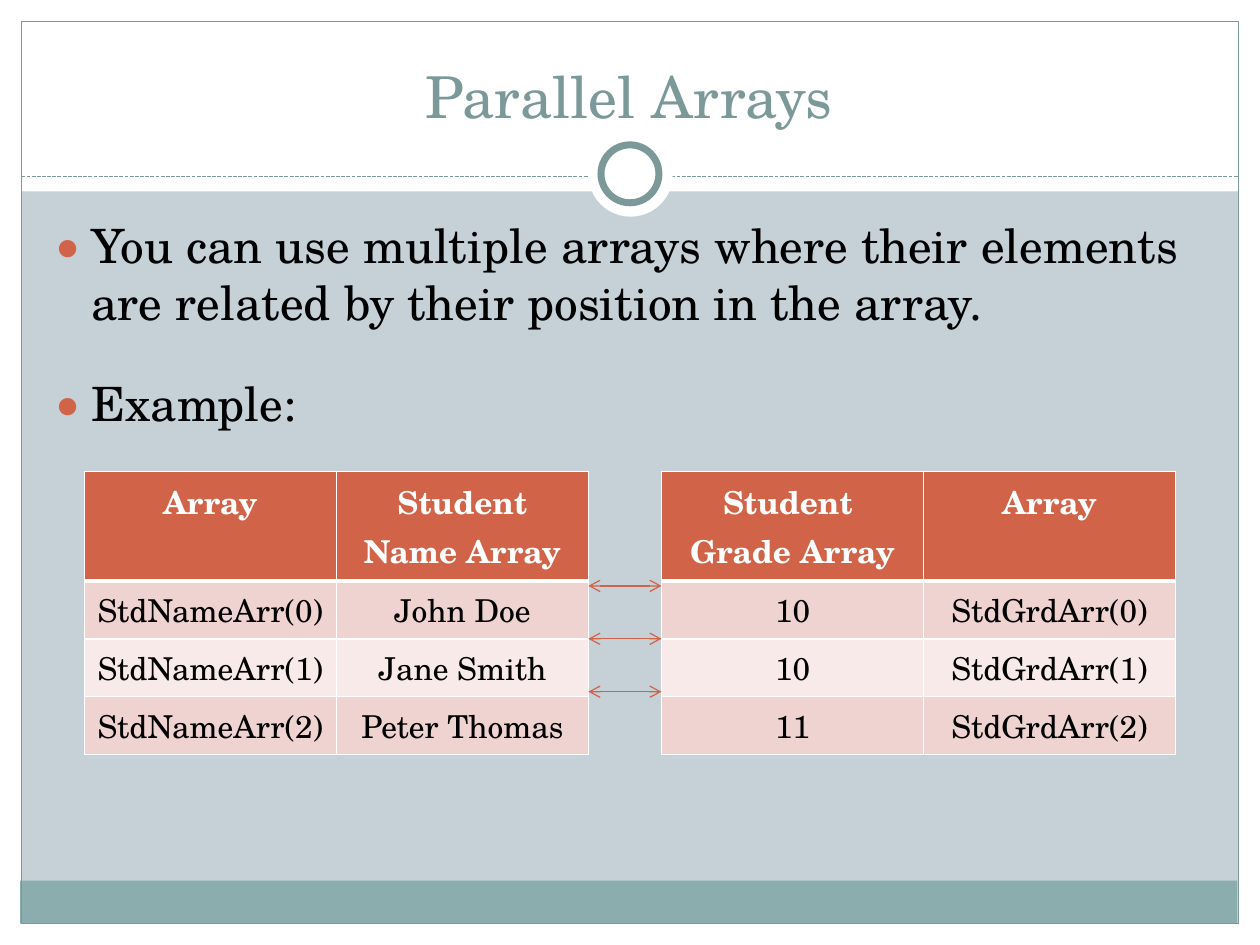
from dataclasses import dataclass
from lxml.etree import SubElement as Sub
from pptx import Presentation as Deck
from pptx.dml.color import RGBColor as Rgb
from pptx.enum.dml import MSO_LINE_DASH_STYLE as Dash
from pptx.enum.shapes import MSO_CONNECTOR as Link, MSO_SHAPE as Kind
from pptx.enum.text import MSO_ANCHOR as Anchor, PP_ALIGN as Align
from pptx.oxml.ns import qn
from pptx.util import Emu, Pt

SCALE = 9144
FONT = "TeX Gyre Schola"
HUES = {
    "back": "C5D1D7", "white": "FFFFFF", "band": "8CADAE", "edge": "7C999A",
    "rust": "D16349", "rose": "EED3D0", "pale": "F7EAE9", "black": "000000",
}
TITLE = {"size": Pt(33), "bold": False, "hue": "edge"}
BODY = {"size": Pt(27), "bold": False, "hue": "black"}
HEAD = {"size": Pt(18), "bold": True, "hue": "white"}
CELL = {"size": Pt(18), "bold": False, "hue": "black"}
PAD = {"margin_top": 5, "margin_bottom": 5, "margin_left": 10, "margin_right": 10}
TOP, TALL, LOW = 374, 87, 46


@dataclass
class Box:
    x: int
    y: int
    w: int
    h: int
    fill: str = ""
    line: str = ""
    width: float = 0.75
    kind: Kind = Kind.RECTANGLE


@dataclass
class Wire:
    x: int
    y: int
    end: int
    hue: str
    dash: bool = False
    heads: bool = False


@dataclass
class Grid:
    x: int
    cols: list[int]
    rows: list[list[str]]


@dataclass
class Point:
    text: str
    gap: float


BOXES = [
    Box(0, 733, 1000, 17, "white"),
    Box(0, 0, 1000, 152, "white"),
    Box(0, 0, 17, 750, "white"),
    Box(983, 0, 17, 750, "white"),
    Box(16, 699, 966, 34, "band"),
    Box(17, 17, 966, 716, line="edge"),
]
RINGS = [
    Box(467, 105, 67, 67, "white", kind=Kind.OVAL),
    Box(477, 115, 46, 46, "white", "edge", 4, Kind.OVAL),
]
POINTS = [
    Point("You can use multiple arrays where their elements are related by "
          "their position in the array.", 5.4),
    Point("Example:", 25),
]
NAMES = ["John Doe", "Jane Smith", "Peter Thomas"]
GRADES = ["10", "10", "11"]
GRIDS = [
    Grid(67, [200, 200], [["Array", "Student Name Array"]]
         + [[f"StdNameArr({i})", name] for i, name in enumerate(NAMES)]),
    Grid(525, [208, 200], [["Student \vGrade Array", "Array"]]
         + [[grade, f"StdGrdArr({i})"] for i, grade in enumerate(GRADES)]),
]


def px(num: int) -> Emu:
    return Emu(num * SCALE)


def tint(hue: str) -> Rgb:
    return Rgb.from_string(HUES[hue])


def style(font, look: dict) -> None:
    for key, val in {**look, "name": FONT}.items():
        if key == "hue":
            font.color.rgb = tint(val)
        else:
            setattr(font, key, val)


def draw_box(slide, box: Box) -> None:
    shape = slide.shapes.add_shape(box.kind, *map(px, (box.x, box.y, box.w, box.h)))
    shape.shadow.inherit = False
    if box.fill:
        shape.fill.solid()
        shape.fill.fore_color.rgb = tint(box.fill)
    else:
        shape.fill.background()
    if box.line:
        shape.line.color.rgb = tint(box.line)
        shape.line.width = Pt(box.width)
    else:
        shape.line.fill.background()


def draw_wire(slide, wire: Wire) -> None:
    ends = map(px, (wire.x, wire.y, wire.end, wire.y))
    shape = slide.shapes.add_connector(Link.STRAIGHT, *ends)
    shape.line.color.rgb = tint(wire.hue)
    shape.line.width = Pt(0.75)
    if wire.dash:
        shape.line.dash_style = Dash.SQUARE_DOT
    if wire.heads:
        line = shape._element.spPr.find(qn("a:ln"))
        for tag in ("a:headEnd", "a:tailEnd"):
            Sub(line, qn(tag), type="arrow")
    Sub(shape._element.spPr, qn("a:effectLst"))


def add_text(slide, x: int, y: int, w: int, h: int):
    frame = slide.shapes.add_textbox(*map(px, (x, y, w, h))).text_frame
    frame.word_wrap = True
    return frame


def draw_title(slide, text: str) -> None:
    frame = add_text(slide, 33, 25, 933, 83)
    frame.vertical_anchor = Anchor.BOTTOM
    para = frame.paragraphs[0]
    para.alignment = Align.CENTER
    run = para.add_run()
    run.text = text
    style(run.font, TITLE)


def draw_points(slide, points: list[Point]) -> None:
    frame = add_text(slide, 33, 167, 930, 500)
    for i, point in enumerate(points):
        para = frame.add_paragraph() if i else frame.paragraphs[0]
        para.space_before = Pt(point.gap)
        run = para.add_run()
        run.text = point.text
        style(run.font, BODY)
        props = para._p.get_or_add_pPr()
        props.set("marL", str(px(30)))
        props.set("indent", str(px(-30)))
        Sub(Sub(props, qn("a:buClr")), qn("a:srgbClr"), val=HUES["rust"])
        Sub(props, qn("a:buSzPct"), val="85000")
        Sub(props, qn("a:buFont"), typeface=FONT)
        Sub(props, qn("a:buChar"), char="●")


def edge_cell(cell, row: int) -> None:
    props = cell._tc.get_or_add_tcPr()
    thick = {"lnT": row == 1, "lnB": row == 0}
    for side in ("lnL", "lnR", "lnT", "lnB"):
        wide = Pt(3 if thick.get(side) else 1)
        line = Sub(props, qn(f"a:{side}"), w=str(wide))
        Sub(Sub(line, qn("a:solidFill")), qn("a:srgbClr"), val=HUES["white"])


def draw_grid(slide, grid: Grid) -> None:
    count = len(grid.rows)
    high = TALL + LOW * (count - 1)
    place = map(px, (grid.x, TOP, sum(grid.cols), high))
    table = slide.shapes.add_table(count, len(grid.cols), *place).table
    for col, wide in zip(table.columns, grid.cols):
        col.width = px(wide)
    for r, texts in enumerate(grid.rows):
        table.rows[r].height = px(LOW if r else TALL)
        fill = ("pale" if r % 2 == 0 else "rose") if r else "rust"
        for c, text in enumerate(texts):
            cell = table.cell(r, c)
            for key, val in PAD.items():
                setattr(cell, key, px(val))
            edge_cell(cell, r)
            cell.fill.solid()
            cell.fill.fore_color.rgb = tint(fill)
            cell.text = text
            para = cell.text_frame.paragraphs[0]
            para.alignment = Align.CENTER
            for run in para.runs:
                style(run.font, CELL if r else HEAD)


def main() -> None:
    deck = Deck()
    deck.slide_width, deck.slide_height = px(1000), px(750)
    slide = deck.slides.add_slide(deck.slide_layouts[6])
    slide.background.fill.solid()
    slide.background.fill.fore_color.rgb = tint("back")
    for box in BOXES:
        draw_box(slide, box)
    draw_wire(slide, Wire(17, 140, 983, "edge", dash=True))
    for ring in RINGS:
        draw_box(slide, ring)
    draw_title(slide, "Parallel Arrays")
    draw_points(slide, POINTS)
    for grid in GRIDS:
        draw_grid(slide, grid)
    for i in range(len(NAMES)):
        draw_wire(slide, Wire(467, 465 + 42 * i, 525, "rust", heads=True))
    deck.save("out.pptx")


if __name__ == "__main__":
    main()
